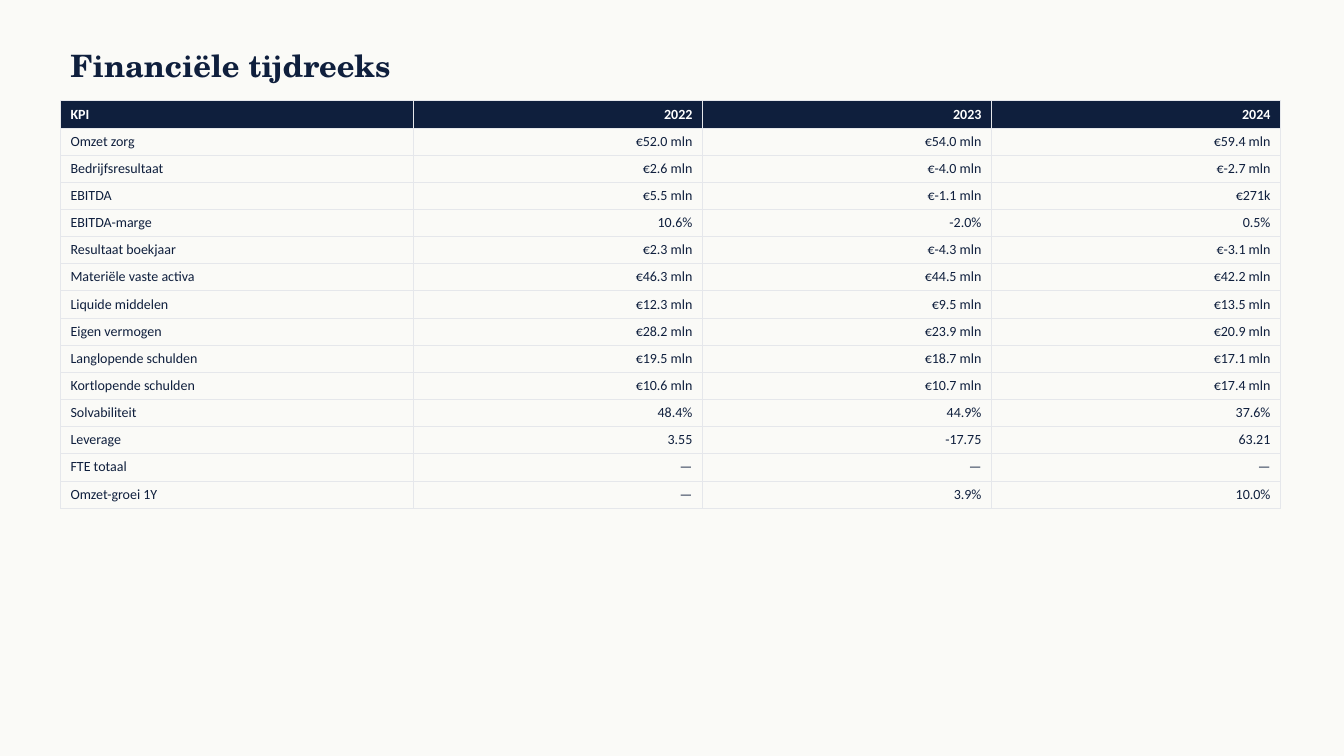
from dataclasses import dataclass

from lxml.etree import SubElement
from pptx import Presentation
from pptx.dml.color import RGBColor as Rgb
from pptx.enum.text import MSO_ANCHOR as Anchor, PP_ALIGN as Align
from pptx.oxml.ns import qn
from pptx.util import Inches, Pt


@dataclass(frozen=True)
class Theme:
    """Colours, fonts and type sizes of the deck."""
    paper: str = "FAFAF7"
    navy: str = "0F1F3D"
    white: str = "FFFFFF"
    rule: str = "E5E7EB"
    serif: str = "TeX Gyre Schola"
    sans: str = "Calibri"
    large: float = 22
    small: float = 10
    line: float = 0.5


THEME = Theme()
TITLE = "Financiële tijdreeks"
HEAD = ("KPI", "2022", "2023", "2024")
ROWS = (
    ("Omzet zorg", "€52.0 mln", "€54.0 mln", "€59.4 mln"),
    ("Bedrijfsresultaat", "€2.6 mln", "€-4.0 mln", "€-2.7 mln"),
    ("EBITDA", "€5.5 mln", "€-1.1 mln", "€271k"),
    ("EBITDA-marge", "10.6%", "-2.0%", "0.5%"),
    ("Resultaat boekjaar", "€2.3 mln", "€-4.3 mln", "€-3.1 mln"),
    ("Materiële vaste activa", "€46.3 mln", "€44.5 mln", "€42.2 mln"),
    ("Liquide middelen", "€12.3 mln", "€9.5 mln", "€13.5 mln"),
    ("Eigen vermogen", "€28.2 mln", "€23.9 mln", "€20.9 mln"),
    ("Langlopende schulden", "€19.5 mln", "€18.7 mln", "€17.1 mln"),
    ("Kortlopende schulden", "€10.6 mln", "€10.7 mln", "€17.4 mln"),
    ("Solvabiliteit", "48.4%", "44.9%", "37.6%"),
    ("Leverage", "3.55", "-17.75", "63.21"),
    ("FTE totaal", "—", "—", "—"),
    ("Omzet-groei 1Y", "—", "3.9%", "10.0%"),
)


def write(frame, text, color, align=Align.LEFT, **form):
    """Put one formatted line of text in a frame."""
    para = frame.paragraphs[0]
    para.alignment = align
    run = para.add_run()
    run.text = text
    for key, value in form.items():
        setattr(run.font, key, value)
    run.font.color.rgb = Rgb.from_string(color)


def border(cell):
    """Draw a thin rule on all four sides of a cell."""
    props = cell._tc.get_or_add_tcPr()
    for side in ("lnL", "lnR", "lnT", "lnB"):
        line = SubElement(props, qn(f"a:{side}"), w=str(Pt(THEME.line)))
        fill = SubElement(line, qn("a:solidFill"))
        SubElement(fill, qn("a:srgbClr"), val=THEME.rule)


def title(slide, left, top, width, height):
    """Place the slide title in the given box."""
    frame = slide.shapes.add_textbox(left, top, width, height).text_frame
    frame.word_wrap = True
    frame.vertical_anchor = Anchor.MIDDLE
    write(frame, TITLE, THEME.navy, name=THEME.serif,
          size=Pt(THEME.large), bold=True)


def grid(slide, left, top, width, height):
    """Place the table of yearly figures in the given box."""
    data = (HEAD, *ROWS)
    table = slide.shapes.add_table(
        len(data), len(HEAD), left, top, width, height).table
    table.horz_banding = False
    first = Inches(3.5)
    rest = (width - first) // (len(HEAD) - 1)
    for num, col in enumerate(table.columns):
        col.width = rest if num else first
    for row, texts in enumerate(data):
        for col, text in enumerate(texts):
            cell = table.cell(row, col)
            border(cell)
            if row:
                cell.fill.background()
            else:
                cell.fill.solid()
                cell.fill.fore_color.rgb = Rgb.from_string(THEME.navy)
            write(cell.text_frame, text, THEME.navy if row else THEME.white,
                  Align.RIGHT if col else Align.LEFT, name=THEME.sans,
                  size=Pt(THEME.small), bold=not row)


def main():
    """Build the slide and save it."""
    deck = Presentation()
    deck.slide_width, deck.slide_height = Inches(13.33), Inches(7.5)
    slide = deck.slides.add_slide(deck.slide_layouts[6])
    back = slide.background.fill
    back.solid()
    back.fore_color.rgb = Rgb.from_string(THEME.paper)
    left = Inches(0.6)
    title(slide, left, Inches(0.4), Inches(12), Inches(0.5))
    grid(slide, left, Inches(1), Inches(12.1), Inches(4.04))
    deck.save("out.pptx")


if __name__ == "__main__":
    main()
